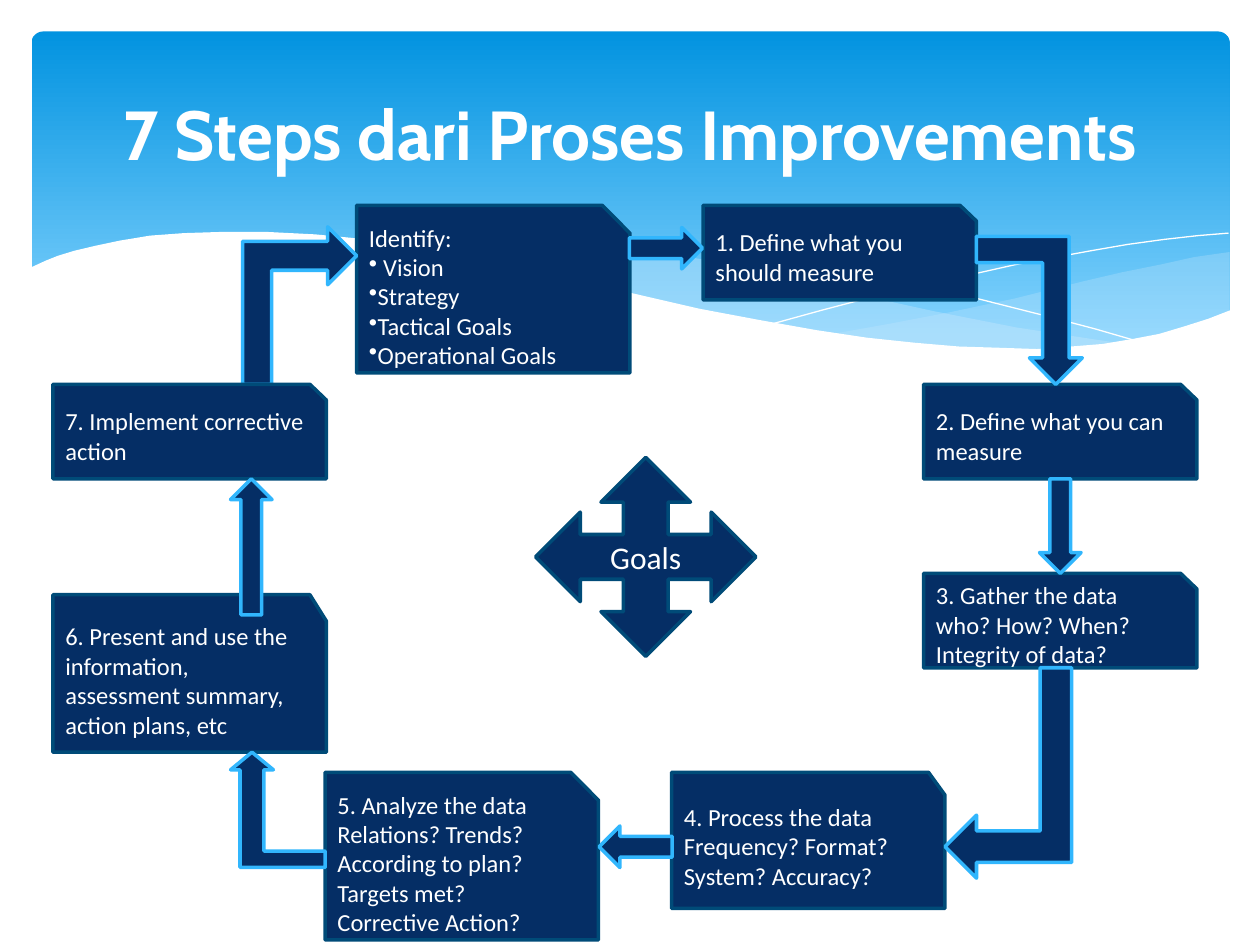
from lxml.etree import SubElement
from pptx import Presentation
from pptx.dml.color import RGBColor
from pptx.enum.shapes import MSO_SHAPE as SHAPE
from pptx.enum.text import MSO_ANCHOR as ANCHOR, PP_ALIGN as ALIGN
from pptx.oxml.ns import qn
from pptx.util import Inches, Pt

NAVY, EDGE, SKY, WHITE, PALE = "052E65", "004B78", "31B6FD", "FFFFFF", "C6E7FC"

RIGHT_WAVE = [
    (9.76, 2), (9.48, 2.04), (9.21, 2.1), (8.91, 2.16), (8.61, 2.23), (8.05, 2.37),
    (7.53, 2.48), (7.06, 2.57), (6.61, 2.65), (6.91, 2.69), (7.19, 2.72), (7.45, 2.75),
    (7.69, 2.77), (8.03, 2.78), (8.35, 2.77), (8.63, 2.75), (8.89, 2.72), (9.13, 2.67),
    (9.35, 2.62), (9.49, 2.57), (9.63, 2.52), (9.76, 2.47)]
MIDDLE_WAVE = [
    (8.93, 2.73), (8.66, 2.69), (8.07, 2.6), (7.41, 2.47), (6.68, 2.31), (6.29, 2.22),
    (5.98, 2.14), (5.69, 2.08), (5.41, 2.03), (5.14, 1.98), (4.89, 1.94), (4.42, 1.89),
    (3.99, 1.86), (3.61, 1.85), (3.28, 1.87), (2.86, 1.91), (3.23, 1.96), (3.62, 2.03),
    (4.04, 2.11), (4.49, 2.22), (4.91, 2.32), (5.3, 2.4), (5.66, 2.48), (6.01, 2.55),
    (6.34, 2.61), (6.65, 2.66), (6.95, 2.7), (7.22, 2.74), (7.48, 2.76), (7.85, 2.78),
    (8.18, 2.78), (8.48, 2.77), (8.76, 2.75)]
FALLING_LINE = [
    (3.09, 1.95), (3.28, 1.92), (3.53, 1.89), (3.87, 1.87), (4.16, 1.87), (4.5, 1.88),
    (4.89, 1.9), (5.33, 1.94), (5.82, 2), (6.36, 2.08), (6.95, 2.19), (7.6, 2.33),
    (8.31, 2.51), (8.69, 2.61), (9.07, 2.72)]
RISING_LINE = [
    (6.13, 2.57), (6.53, 2.46), (6.95, 2.35), (7.48, 2.23), (8.06, 2.1), (8.66, 1.99),
    (8.95, 1.94), (9.24, 1.9), (9.51, 1.87), (9.75, 1.85)]
WHITE_WAVE = [
    (9.77, 2.46), (9.59, 2.53), (9.4, 2.59), (9.2, 2.65), (8.99, 2.69), (8.75, 2.73),
    (8.5, 2.75), (8.23, 2.77), (7.93, 2.76), (7.61, 2.75), (7.26, 2.72), (6.88, 2.68),
    (6.48, 2.62), (6.03, 2.54), (5.55, 2.45), (5.03, 2.33), (4.47, 2.2), (3.91, 2.07),
    (3.4, 1.97), (2.92, 1.9), (2.5, 1.86), (2.11, 1.84), (1.77, 1.84), (1.46, 1.85),
    (1.19, 1.87), (0.95, 1.91), (0.76, 1.95), (0.59, 1.99), (0.46, 2.03), (0.36, 2.07),
    (0.23, 2.13), (0.23, 3.29), (9.77, 3.29)]

CARDS = [
    (2.83, 1.63, 1.33, 0.22, ["Identify:", " Vision", "Strategy", "Tactical Goals",
                              "Operational Goals"]),
    (2.58, 6.13, 1.33, 0.22, ["5. Analyze the data Relations? Trends? According to plan? "
                              "Targets met? Corrective Action?"]),
    (7.33, 4.55, 0.75, 0.13, ["3. Gather the data who? How? When? Integrity of data?"]),
    (5.58, 1.63, 0.75, 0.13, ["1. Define what you should measure"]),
    (5.33, 6.13, 1.08, 0.13, ["4. Process the data Frequency? Format? System? Accuracy?"]),
    (7.33, 3.05, 0.75, 0.13, ["2. Define what you can measure"]),
    (0.42, 4.72, 1.25, 0.13, ["6. Present and use the information, assessment summary, "
                              "action plans, etc"])]
LAST_CARD = (0.42, 3.05, 0.75, 0.13, ["7. Implement corrective action"])

ELBOWS = [
    ((2.04, 3.05), (2.83, 2.03), True, 0.23, 0.23, 0.23, 0.23),
    ((2.58, 6.82), (2, 5.97), False, 0.13, 0.19, 0.14, 0.17),
    ((7.75, 1.98), (8.38, 3.05), False, 0.21, 0.21, 0.21, 0.21),
    ((8.38, 5.3), (7.5, 6.72), True, 0.25, 0.25, 0.25, 0.25)]
STRAIGHTS = [
    (8.25, 3.8, 0.75, 180), (4.88, 6.43, 0.58, 270),
    (1.83, 3.8, 1.08, 0), (5.12, 1.68, 0.58, 90)]


def rgb(color):
    return RGBColor.from_string(color)


def style(sp, fill=None, line=None, width=2):
    sp.shadow.inherit = False
    if fill:
        sp.fill.solid()
        sp.fill.fore_color.rgb = rgb(fill)
    else:
        sp.fill.background()
    if line:
        sp.line.color.rgb = rgb(line)
        sp.line.width = Pt(width)
    else:
        sp.line.fill.background()
    return sp


def outline(s, points, close=True):
    pts = [(Inches(x), Inches(y)) for x, y in points]
    builder = s.shapes.build_freeform(*pts[0], scale=1.0)
    builder.add_line_segments(pts[1:], close=close)
    return builder.convert_to_shape()


def add_shape(s, kind, x, y, w, h):
    return s.shapes.add_shape(kind, Inches(x), Inches(y), Inches(w), Inches(h))


def add_run(p, text, size, font="Calibri", bold=False):
    r = p.add_run()
    r.text = text
    r.font.size, r.font.name, r.font.bold = Pt(size), font, bold
    r.font.color.rgb = rgb(WHITE)


def add_backdrop(s, x, y, w, h):
    sp = style(add_shape(s, SHAPE.ROUNDED_RECTANGLE, x, y, w, h))
    sp.adjustments[0] = 0.034
    sp.fill.gradient()
    sp.fill.gradient_angle = 270
    for stop, color, position in zip(sp.fill.gradient_stops, ("0293E0", "83D3FE"), (0, 0.9)):
        stop.color.rgb = rgb(color)
        stop.position = position
    for points, opacity in ((RIGHT_WAVE, 29), (MIDDLE_WAVE, 40)):
        wave = style(outline(s, points), PALE)
        color = wave._element.spPr.find(qn("a:solidFill"))[0]
        SubElement(color, qn("a:alpha"), val=str(opacity * 1000))
    for points in (FALLING_LINE, RISING_LINE):
        style(outline(s, points, close=False), line=WHITE, width=0)
    style(outline(s, WHITE_WAVE), WHITE)


def add_title(s, x, y, w, h):
    title = s.shapes.title
    s.shapes._spTree.append(title._element)
    title.left, title.top, title.width, title.height = map(Inches, (x, y, w, h))
    tf = title.text_frame
    tf.vertical_anchor = ANCHOR.MIDDLE
    p = tf.paragraphs[0]
    p.alignment = ALIGN.CENTER
    add_run(p, "7 Steps dari Proses Improvements", 39.6, "Cabin", True)


def add_card(s, x, y, h, cut_x, lines, w=2.17):
    cut_y = h / 6
    points = [(x, y), (x + w - cut_x, y), (x + w, y + cut_y), (x + w, y + h), (x, y + h)]
    sp = style(outline(s, points), NAVY, EDGE)
    tf = sp.text_frame
    tf.word_wrap = True
    tf.vertical_anchor = ANCHOR.MIDDLE
    tf.margin_top = Inches(0.05 + cut_y / 2)
    tf.margin_right = Inches(0.1 + cut_x / 2)
    for i, line in enumerate(lines):
        p = tf.add_paragraph() if i else tf.paragraphs[0]
        p.alignment = ALIGN.LEFT
        if i:
            SubElement(p._p.get_or_add_pPr(), qn("a:buChar"), char="•")
        add_run(p, line, 14)


def add_elbow(s, start, tip, vertical_first, leg, shaft, head, half):
    x, y = start
    dx, dy = tip[0] - x, tip[1] - y
    across, along = (abs(dy), abs(dx)) if vertical_first else (abs(dx), abs(dy))
    sign_x, sign_y = (1 if dx > 0 else -1), (1 if dy > 0 else -1)
    a, b, neck = leg / 2, shaft / 2, along - head
    local = [(0, -a), (across + b, -a), (across + b, neck), (across + half, neck),
             (across, along), (across - half, neck), (across - b, neck),
             (across - b, a), (0, a)]
    if vertical_first:
        local = [(v, u) for u, v in local]
    style(outline(s, [(x + sign_x * u, y + sign_y * v) for u, v in local]), NAVY, SKY)


def add_straight(s, x, y, h, angle):
    sp = style(add_shape(s, SHAPE.UP_ARROW, x, y, 0.33, h), NAVY, SKY)
    sp.rotation = angle


def add_goals(s, x, y, w, h):
    sp = style(add_shape(s, SHAPE.QUAD_ARROW, x, y, w, h), NAVY, EDGE)
    tf = sp.text_frame
    tf.vertical_anchor = ANCHOR.MIDDLE
    p = tf.paragraphs[0]
    p.alignment = ALIGN.CENTER
    add_run(p, "Goals", 18)


def main():
    prs = Presentation()
    prs.slide_width, prs.slide_height = Inches(10), Inches(7.5)
    s = prs.slides.add_slide(prs.slide_layouts[5])
    add_backdrop(s, 0.25, 0.25, 9.51, 2.7)
    add_title(s, 0.5, 0.37, 9, 1.37)
    for card in CARDS:
        add_card(s, *card)
    for elbow in ELBOWS:
        add_elbow(s, *elbow)
    add_card(s, *LAST_CARD)
    for straight in STRAIGHTS:
        add_straight(s, *straight)
    add_goals(s, 4.25, 3.63, 1.75, 1.58)
    prs.save("out.pptx")


if __name__ == "__main__":
    main()
